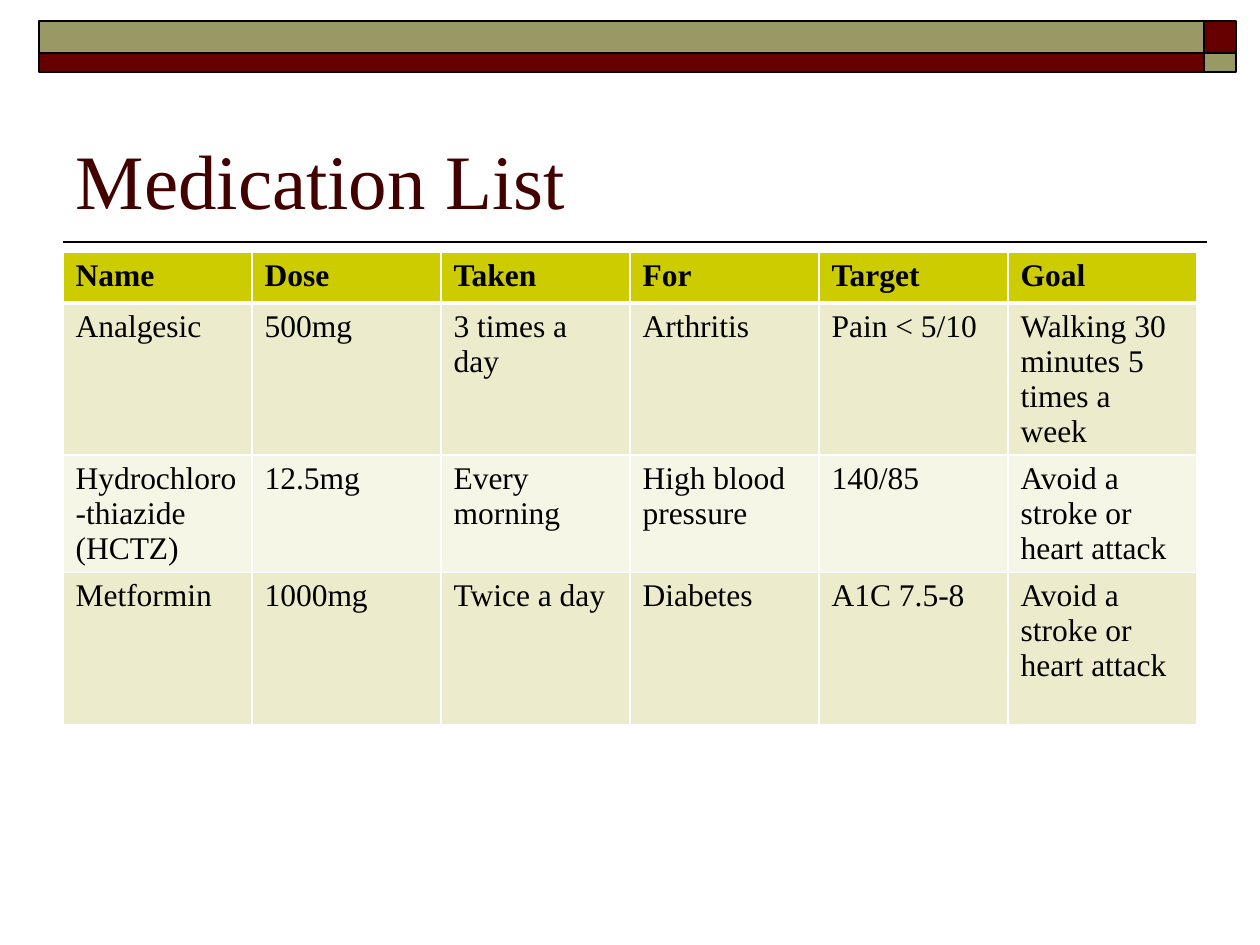
import pptx
import pptx.dml.color
import pptx.enum.shapes
import pptx.enum.text
import pptx.oxml.ns
import pptx.util
from lxml import etree

SCALE = 914400 / 126
FONT = "Times New Roman"
COLOURS = {
    "black": "000000", "white": "FFFFFF", "maroon": "660000", "olive": "999966",
    "title": "420000", "header": "CCCC00", "odd": "ECECCC", "even": "F6F6E7",
}
COLUMN_WIDTH = 189
ROW_HEIGHTS = [51, 152, 117, 152]
MEDICATIONS = [
    ["Name", "Dose", "Taken", "For", "Target", "Goal"],
    ["Analgesic", "500mg", "3 times a day", "Arthritis", "Pain < 5/10",
     "Walking 30 minutes 5 times a week"],
    ["Hydrochloro-thiazide (HCTZ)", "12.5mg", "Every morning", "High blood pressure",
     "140/85", "Avoid a stroke or heart attack"],
    ["Metformin", "1000mg", "Twice a day", "Diabetes", "A1C 7.5-8",
     "Avoid a stroke or heart attack"],
]


def px(*lengths):
    """Turn pixel lengths into a list of EMU lengths."""
    return [pptx.util.Emu(round(length * SCALE)) for length in lengths]


def colour(name):
    """Return the named colour."""
    return pptx.dml.color.RGBColor.from_string(COLOURS[name])


def add_run(para, text, size, ink, bold=False):
    """Add one formatted run to a paragraph."""
    span = para.add_run()
    span.text = text
    span.font.name = FONT
    span.font.size = pptx.util.Pt(size)
    span.font.bold = bold
    span.font.color.rgb = colour(ink)


def add_bar(page, left, top, width, height, fill):
    """Add an outlined rectangle of the banner."""
    bar = page.shapes.add_shape(
        pptx.enum.shapes.MSO_SHAPE.RECTANGLE, *px(left, top, width, height))
    bar.shadow.inherit = False
    bar.fill.solid()
    bar.fill.fore_color.rgb = colour(fill)
    bar.line.color.rgb = colour("black")
    bar.line.width = pptx.util.Pt(1)


def add_banner(page):
    """Add the two rows of bars with alternating colours."""
    fills = ["olive", "maroon"]
    for row, (top, height) in enumerate([(21, 32), (53, 19)]):
        for column, (left, width) in enumerate([(39, 1165), (1204, 32)]):
            add_bar(page, left, top, width, height, fills[(row + column) % 2])


def add_rule(page, left, right, top):
    """Add the horizontal line under the title."""
    rule = page.shapes.add_connector(
        pptx.enum.shapes.MSO_CONNECTOR.STRAIGHT, *px(right, top, left, top))
    rule.line.color.rgb = colour("black")
    rule.line.width = pptx.util.Pt(1)
    etree.SubElement(rule._element.spPr, pptx.oxml.ns.qn("a:effectLst"))


def set_title(page, text):
    """Place and format the title placeholder."""
    title = page.shapes.title
    title.left, title.top, title.width, title.height = px(63, 73, 1134, 158)
    frame = title.text_frame
    frame.word_wrap = True
    frame.auto_size = pptx.enum.text.MSO_AUTO_SIZE.NONE
    frame.vertical_anchor = pptx.enum.text.MSO_ANCHOR.BOTTOM
    para = frame.paragraphs[0]
    para.alignment = pptx.enum.text.PP_ALIGN.LEFT
    add_run(para, text, 44, "title")


def set_borders(cell, widths):
    """Draw white cell borders with a width in points for each side."""
    properties = cell._tc.get_or_add_tcPr()
    for position, (side, width) in enumerate(widths.items()):
        edge = etree.Element(
            pptx.oxml.ns.qn(f"a:ln{side}"), w=str(pptx.util.Pt(width)))
        fill = etree.SubElement(edge, pptx.oxml.ns.qn("a:solidFill"))
        etree.SubElement(fill, pptx.oxml.ns.qn("a:srgbClr"), val=COLOURS["white"])
        properties.insert(position, edge)


def add_medication_table(page):
    """Add the banded medication table."""
    columns = len(MEDICATIONS[0])
    table = page.shapes.add_table(
        len(MEDICATIONS), columns,
        *px(63, 252, COLUMN_WIDTH * columns, sum(ROW_HEIGHTS))).table
    for column in table.columns:
        column.width = px(COLUMN_WIDTH)[0]
    for row, entries in enumerate(MEDICATIONS):
        table.rows[row].height = px(ROW_HEIGHTS[row])[0]
        band = "header" if row == 0 else ("even", "odd")[row % 2]
        borders = {"L": 1, "R": 1, "T": 3 if row == 1 else 1, "B": 3 if row == 0 else 1}
        for column, text in enumerate(entries):
            cell = table.cell(row, column)
            cell.fill.solid()
            cell.fill.fore_color.rgb = colour(band)
            set_borders(cell, borders)
            add_run(cell.text_frame.paragraphs[0], text, 18, "black", row == 0)


def main():
    """Build and save the medication slide."""
    deck = pptx.Presentation()
    deck.slide_width, deck.slide_height = px(1260, 945)
    page = deck.slides.add_slide(deck.slide_layouts[5])
    add_rule(page, 63, 1207, 242)
    add_banner(page)
    set_title(page, "Medication List")
    add_medication_table(page)
    deck.save("out.pptx")


if __name__ == "__main__":
    main()
